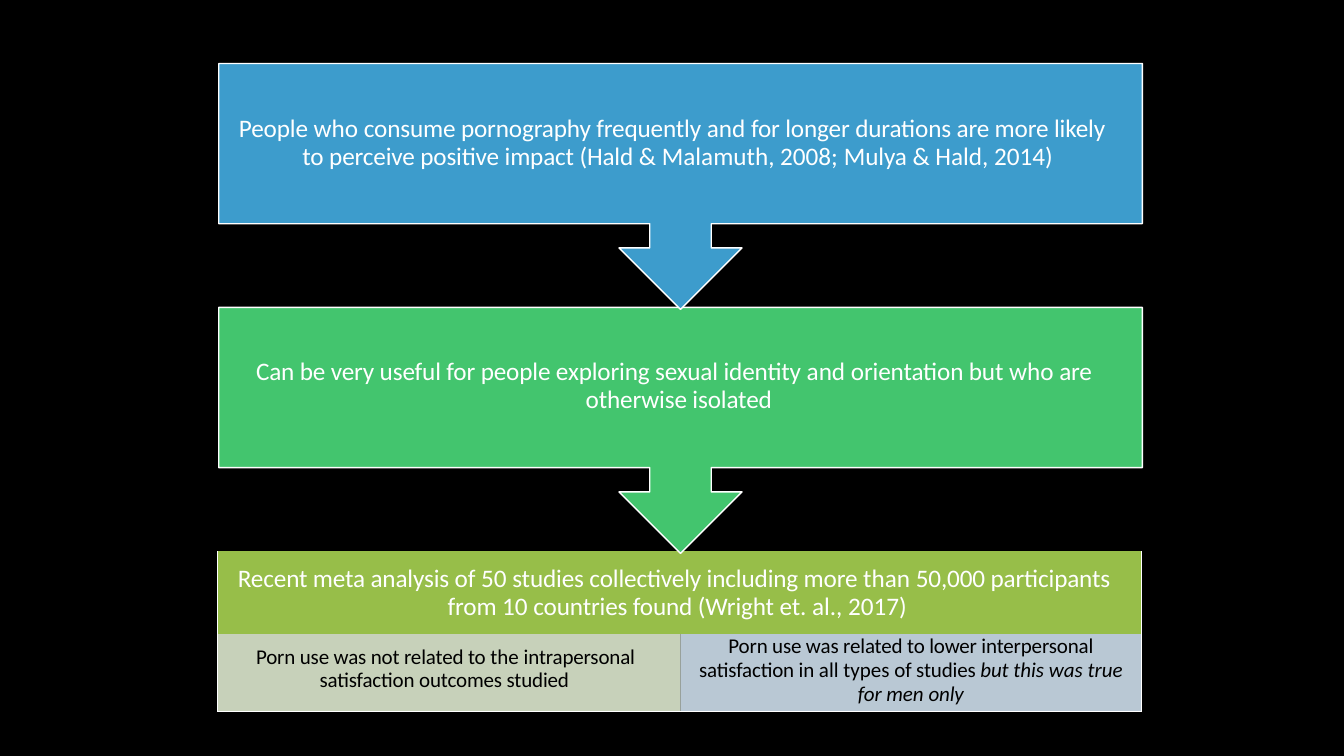
from lxml import etree
from pptx import Presentation
from pptx.dml.color import RGBColor
from pptx.enum.shapes import MSO_SHAPE
from pptx.enum.text import MSO_ANCHOR, PP_ALIGN
from pptx.oxml.ns import qn
from pptx.util import Inches, Pt

ALIGN_LEFT, CENTER = PP_ALIGN.LEFT, PP_ALIGN.CENTER
TOP = MSO_ANCHOR.TOP
RECTANGLE = MSO_SHAPE.RECTANGLE
WHITE, BLACK = "FFFFFF", "000000"
NO_STYLE = "{2D5ABB26-0587-4C30-8999-92F81FD0307C}"
WIDTH, HEIGHT = 13.33, 7.5
LEFT, RIGHT, MIDDLE = 2.17, 11.33, 6.75
BOX_H, NECK_H, ARROW_H = 1.59, 0.24, 0.85
NECK_HALF, HEAD_HALF = 0.305, 0.61

STEPS = [
    (0.63, "3D9CCC", (2.36, 1.09, 8.78, 0.61), 20.2, (0.64, -0.63),
     "People |who |consume pornography frequently |and |for longer durations are "
     "more likely to perceive positive impact (Hald |& Malamuth, 2008; |Mulya |& Hald, 2014)"),
    (3.05, "43C56E", (2.53, 3.51, 8.43, 0.6), 19.9, (3.28, -3.27),
     "Can be very useful for people exploring sexual identity |and |orientation but "
     "|who |are otherwise isolated"),
]
HEADING = ("Recent meta analysis of |50 |studies collectively including more |than "
           "|50,000 participants from |10 |countries found (Wright et. |al., 2017)")
INTRAPERSONAL = ("Porn use was not related to |the |intrapersonal satisfaction "
                 "outcomes studied")
INTERPERSONAL = ("Porn use was related to lower interpersonal satisfaction in "
                 "|all types |of studies ")
MEN_ONLY = "but |this was true |for |men |only"


def rgb(value):
    """Return the colour for a hex string."""
    return RGBColor.from_string(value)


def write(tf, parts, size, color, spacing, indents=None):
    """Write (text, italic) parts; each bar switches tight spacing off or on."""
    p = tf.paragraphs[0]
    p.alignment, p.line_spacing = CENTER, spacing
    if indents:
        p.alignment = ALIGN_LEFT
        pPr = p._p.get_or_add_pPr()
        for key, value in zip(("marL", "indent"), indents):
            pPr.set(key, str(Inches(value)))
    for text, italic in parts:
        for i, piece in enumerate(text.split("|")):
            r = p.add_run()
            r.text = piece
            formats = {"name": "Calibri", "size": Pt(size), "italic": italic}
            for key, value in formats.items():
                setattr(r.font, key, value)
            r.font.color.rgb = rgb(color)
            r.font._element.set("spc", "0" if i % 2 else "-10")


def add_backdrop(s):
    """Cover the slide with black."""
    sp = s.shapes.add_shape(RECTANGLE, 0, 0, Inches(WIDTH), Inches(HEIGHT))
    sp.shadow.inherit = False
    sp.fill.solid()
    sp.fill.fore_color.rgb = rgb(BLACK)
    sp.line.fill.background()


def add_callout(s, top, color):
    """Draw a box with a downward arrow as one outline."""
    bottom = top + BOX_H
    shoulder, tip = bottom + NECK_H, bottom + ARROW_H
    points = [(RIGHT, top), (RIGHT, bottom),
              (MIDDLE + NECK_HALF, bottom), (MIDDLE + NECK_HALF, shoulder),
              (MIDDLE + HEAD_HALF, shoulder), (MIDDLE, tip),
              (MIDDLE - HEAD_HALF, shoulder), (MIDDLE - NECK_HALF, shoulder),
              (MIDDLE - NECK_HALF, bottom), (LEFT, bottom)]
    builder = s.shapes.build_freeform(Inches(LEFT), Inches(top))
    builder.add_line_segments([(Inches(x), Inches(y)) for x, y in points], close=True)
    sp = builder.convert_to_shape()
    sp.shadow.inherit = False
    sp.fill.solid()
    sp.fill.fore_color.rgb = rgb(color)
    sp.line.color.rgb = rgb(WHITE)
    sp.line.width = Pt(1)


def set_margins(target, margins):
    """Set left, top, right and bottom margins."""
    for side, value in zip(("left", "top", "right", "bottom"), margins):
        setattr(target, f"margin_{side}", Inches(value))


def add_label(s, box, text, spacing, indents):
    """Add a white text box over a callout."""
    tf = s.shapes.add_textbox(*(Inches(v) for v in box)).text_frame
    tf.word_wrap = True
    set_margins(tf, (0, 0.04, 0, 0))
    write(tf, [(text, False)], 18, WHITE, Pt(spacing), indents)


def set_borders(cell, sides):
    """Give the named sides a white line."""
    tcPr = cell._tc.get_or_add_tcPr()
    for i, side in enumerate(sides):
        ln = etree.Element(qn(f"a:ln{side}"), w=str(Pt(1)))
        fill = etree.SubElement(ln, qn("a:solidFill"))
        etree.SubElement(fill, qn("a:srgbClr"), val=WHITE)
        tcPr.insert(i, ln)


def fill_cell(cell, fill, margins, sides, alpha=100):
    """Give a table cell its colour, margins and borders."""
    cell.vertical_anchor = TOP
    set_margins(cell, margins)
    cell.fill.solid()
    cell.fill.fore_color.rgb = rgb(fill)
    if alpha < 100:
        clr = cell._tc.tcPr.find(f".//{qn('a:srgbClr')}")
        etree.SubElement(clr, qn("a:alpha"), val=str(alpha * 1000))
    set_borders(cell, sides)


def add_findings(s):
    """Add the table with the meta analysis findings."""
    frame = s.shapes.add_table(2, 2, Inches(2.16), Inches(5.47), Inches(9.16), Inches(1.59))
    table = frame.table
    table._tbl.tblPr.find(qn("a:tableStyleId")).text = NO_STYLE
    for column, width in zip(table.columns, (4.59, 4.57)):
        column.width = Inches(width)
    for row, height in zip(table.rows, (0.82, 0.77)):
        row.height = Inches(height)
    heading, intra, inter = table.cell(0, 0), table.cell(1, 0), table.cell(1, 1)
    heading.merge(table.cell(0, 1))
    fill_cell(heading, "97BE49", (0, 0.14, 0, 0), "LR")
    set_borders(table.cell(0, 1), "R")
    fill_cell(intra, "DDE8CF", (0, 0.12, 0, 0), "LB", 90)
    fill_cell(inter, "CEDEEC", (0.12, 0.01, 0.12, 0), "RB", 90)
    write(heading.text_frame, [(HEADING, False)], 18, WHITE, Pt(20.2), (2.28, -2.08))
    write(intra.text_frame, [(INTRAPERSONAL, False)], 15, BLACK, Pt(17), (1.01, -0.63))
    write(inter.text_frame, [(INTERPERSONAL, False), (MEN_ONLY, True)], 15, BLACK, 0.92)


def main():
    """Build the slide and save it."""
    prs = Presentation()
    prs.slide_width, prs.slide_height = Inches(WIDTH), Inches(HEIGHT)
    s = prs.slides.add_slide(prs.slide_layouts[6])
    add_backdrop(s)
    add_findings(s)
    for top, color, box, spacing, indents, text in reversed(STEPS):
        add_callout(s, top, color)
        add_label(s, box, text, spacing, indents)
    prs.save("out.pptx")


if __name__ == "__main__":
    main()
